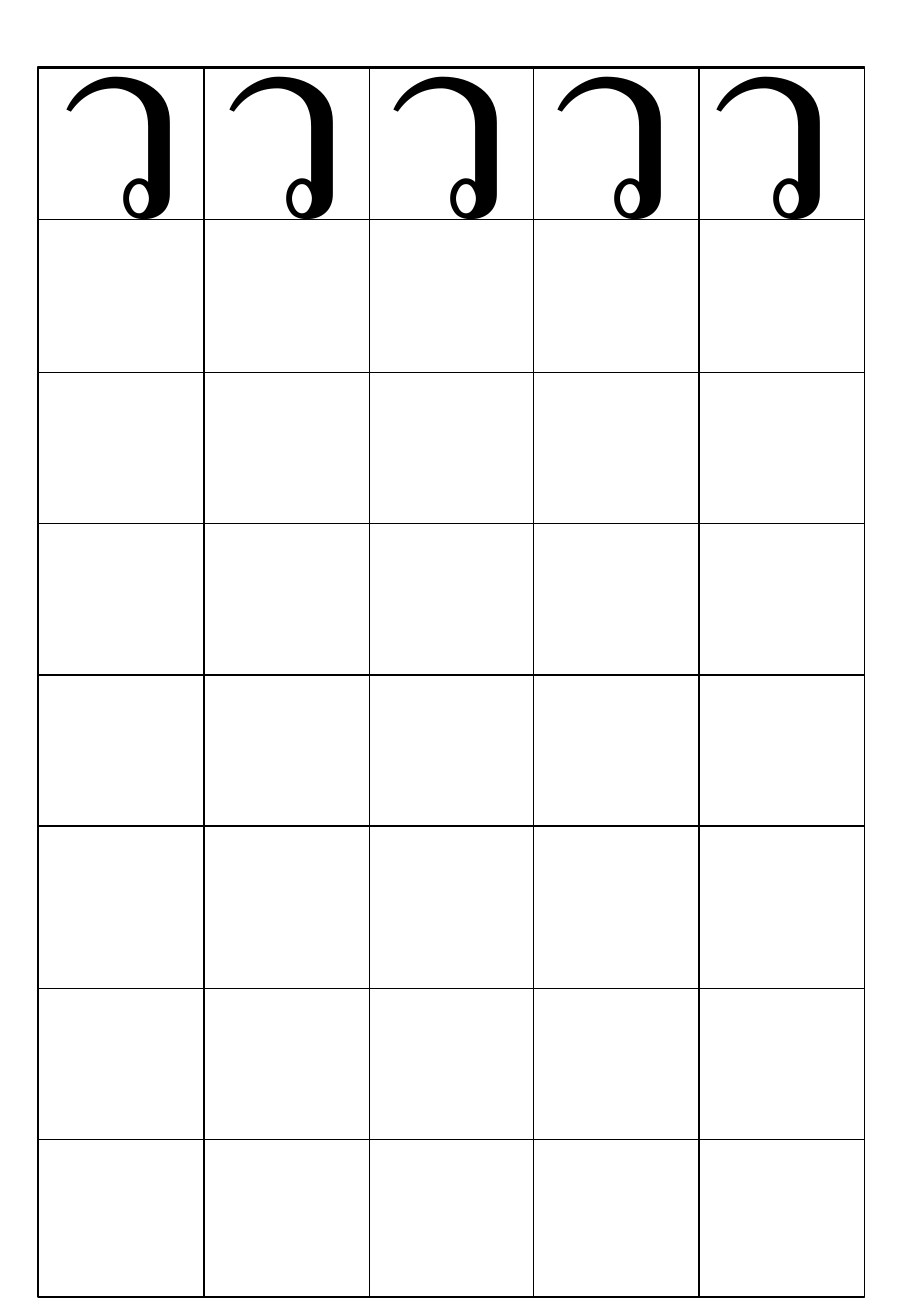
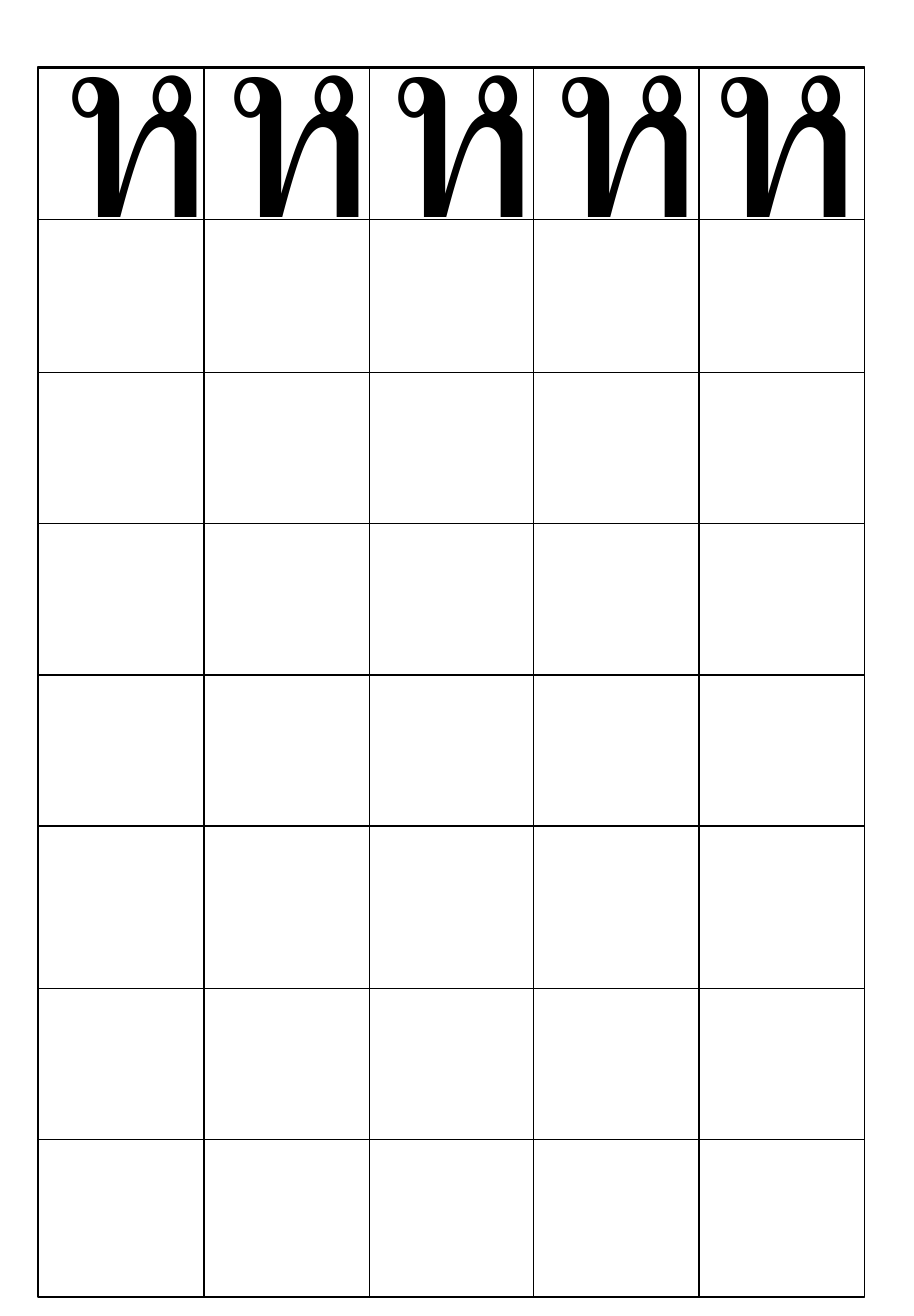
from pptx import Presentation
from pptx import util as u
from pptx.dml.color import RGBColor
from pptx.enum import shapes, text
from pptx.util import Inches

PAGE_WIDTH = u.Emu(5248275)
PAGE_HEIGHT = u.Emu(7559675)
INK = "000000"
FONT = "Calibri"
LETTERS = ["ว", "ห"]
GRID = (0.24, 0.42, 5.19, 7.73)
COLUMN_WIDTH = 1.04
COLUMN_OFFSETS = [1.04, 3.11]
BAND_HEIGHT = 0.95
BAND_OFFSETS = [0.01, 1.92, 3.82, 5.79]
LETTER_OFFSETS = [0.04, 1.06, 2.09, 3.12, 4.12]
LETTER_RISE = 0.77


def color(hex_code):
    """Turn a hex string into a colour."""
    return RGBColor.from_string(hex_code)


def add_outline(page, left, top, width, height):
    """Draw an unfilled rectangle with a thin line."""
    box = page.shapes.add_shape(
        shapes.MSO_SHAPE.RECTANGLE,
        Inches(left), Inches(top), Inches(width), Inches(height),
    )
    box.shadow.inherit = False
    box.fill.background()
    box.line.color.rgb = color(INK)
    box.line.width = u.Pt(0.75)


def add_letter(page, letter, left, top):
    """Write one large model letter."""
    box = page.shapes.add_textbox(
        Inches(left), Inches(top), Inches(1), Inches(2.12)
    )
    frame = box.text_frame
    frame.word_wrap = True
    frame.auto_size = text.MSO_AUTO_SIZE.SHAPE_TO_FIT_TEXT
    para = frame.paragraphs[0]
    para.text = letter
    para.alignment = text.PP_ALIGN.CENTER
    para.font.name = FONT
    para.font.size = u.Pt(120)
    para.font.color.rgb = color(INK)


def add_grid(page, left, top, width, height):
    """Draw the frame, with bands for alternate rows and columns."""
    add_outline(page, left, top, width, height)
    for offset in BAND_OFFSETS:
        add_outline(page, left, top + offset, width, BAND_HEIGHT)
    for offset in COLUMN_OFFSETS:
        add_outline(page, left + offset, top, COLUMN_WIDTH, height)


def add_letter_row(page, letter, left, top):
    """Repeat the model letter across the first row of the grid."""
    for offset in LETTER_OFFSETS:
        add_letter(page, letter, left + offset, top - LETTER_RISE)


def add_practice_page(deck, letter):
    """Add a handwriting practice page for one letter."""
    page = deck.slides.add_slide(deck.slide_layouts[6])
    add_grid(page, *GRID)
    add_letter_row(page, letter, *GRID[:2])


def main():
    """Build the practice sheets."""
    deck = Presentation()
    deck.slide_width = PAGE_WIDTH
    deck.slide_height = PAGE_HEIGHT
    for letter in LETTERS:
        add_practice_page(deck, letter)
    deck.save("out.pptx")


if __name__ == "__main__":
    main()
